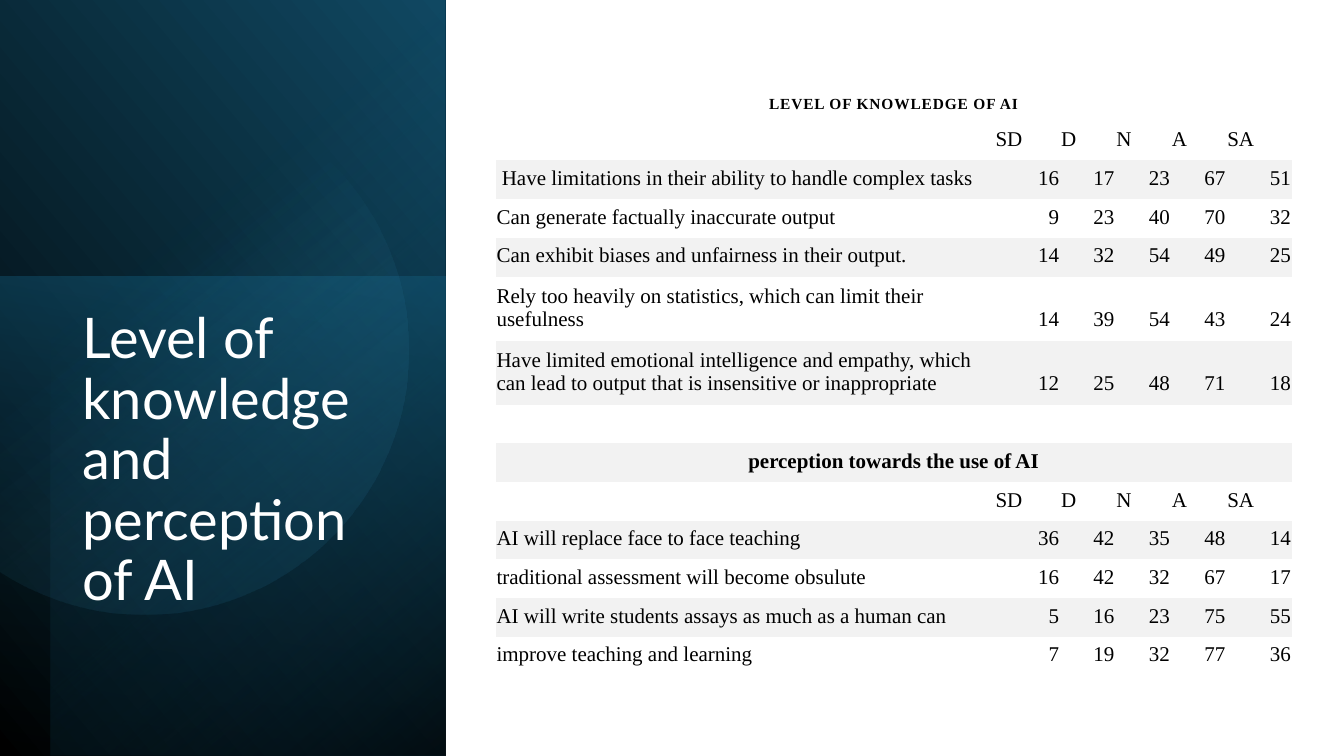
"""Build the slide on the level of knowledge and perception of AI."""
from dataclasses import dataclass
from math import acos, cos, pi, sin

from pptx import Presentation
from pptx.dml.color import RGBColor
from pptx.enum.shapes import MSO_SHAPE
from pptx.enum.text import MSO_ANCHOR, PP_ALIGN
from pptx.oxml import parse_xml
from pptx.oxml.ns import nsdecls, qn
from pptx.util import Inches, Pt

RECTANGLE = MSO_SHAPE.RECTANGLE
TOP, BOTTOM = MSO_ANCHOR.TOP, MSO_ANCHOR.BOTTOM
LEFT, CENTER, RIGHT = PP_ALIGN.LEFT, PP_ALIGN.CENTER, PP_ALIGN.RIGHT
NO_GRID_STYLE = "{2D5ABB26-0587-4C30-8999-92F81FD0307C}"
COLUMNS, ROWS = 160, 90
SLIDE_WIDTH, SLIDE_HEIGHT = Inches(13.33), Inches(7.5)
PANEL_RIGHT = 53


@dataclass(frozen=True)
class Theme:
    title_font: str = "Lato"
    table_font: str = "Times New Roman"
    title_size: float = 40
    caption_size: float = 11
    table_size: float = 15
    title: str = "FFFFFF"
    ink: str = "000000"
    band: str = "F2F2F2"
    black: str = "000000"
    navy: str = "104862"
    teal: str = "156082"
    deep: str = "0B3041"
    sky: str = "46B1E1"


THEME = Theme()


@dataclass(frozen=True)
class Stop:
    position: int
    color: str
    opacity: int = 100


@dataclass(frozen=True)
class Wash:
    left: float
    top: float
    rotation: int
    flipped: bool
    angle: int
    stops: tuple[Stop, ...]


@dataclass(frozen=True)
class Row:
    label: str = ""
    marks: tuple[str, ...] = ()
    height: float = 4.61
    heading: bool = False
    size: float = THEME.table_size
    tracking: float = 0


WASHES = (
    Wash(0, 0, 90, True, 310, (Stop(0, THEME.black), Stop(100, THEME.navy))),
    Wash(0, 32.88, 270, False, 190, (Stop(0, THEME.teal, 50), Stop(100, THEME.deep, 0))),
    Wash(6, 0, 270, True, 220, (Stop(0, THEME.black, 59), Stop(69, THEME.teal, 0))),
)
GLOW = (Stop(39, THEME.sky, 0), Stop(100, THEME.navy, 26))
SCALE = Row(marks=("SD", "D", "N", "A", "SA"))
TALL = 7.62
SURVEY = (
    Row("LEVEL OF KNOWLEDGE OF AI", height=4.9, heading=True,
        size=THEME.caption_size, tracking=0.6),
    SCALE,
    Row(" Have limitations in their ability to handle complex tasks",
        ("16", "17", "23", "67", "51")),
    Row("Can generate factually inaccurate output", ("9", "23", "40", "70", "32")),
    Row("Can exhibit biases and unfairness in their output.",
        ("14", "32", "54", "49", "25")),
    Row("Rely too heavily on statistics, which can limit their usefulness",
        ("14", "39", "54", "43", "24"), TALL),
    Row("Have limited emotional intelligence and empathy, which can lead to output "
        "that is insensitive or inappropriate", ("12", "25", "48", "71", "18"), TALL),
    Row(),
    Row("perception towards the use of AI", heading=True),
    SCALE,
    Row("AI will replace face to face teaching", ("36", "42", "35", "48", "14")),
    Row("traditional assessment will become obsulute", ("16", "42", "32", "67", "17")),
    Row("AI will write students assays as much as a human can",
        ("5", "16", "23", "75", "55")),
    Row("improve teaching and learning", ("7", "19", "32", "77", "36")),
)
SURVEY_COLUMNS = (59.4, 7.8, 6.6, 6.6, 6.6, 7.8)


def across(columns: float) -> int:
    """Turn grid columns into a length."""
    return round(SLIDE_WIDTH * columns / COLUMNS)


def down(rows: float) -> int:
    """Turn grid rows into a length."""
    return round(SLIDE_HEIGHT * rows / ROWS)


def put_text(frame, text: str, *, font: str, size: float, color: str, bold: bool = False,
             align=LEFT, line_spacing: float = 1.0, tracking: float = 0) -> None:
    """Write one formatted paragraph into a text frame."""
    paragraph = frame.paragraphs[0]
    paragraph.alignment = align
    paragraph.line_spacing = line_spacing
    if not text:
        paragraph._p.get_or_add_endParaRPr().set("sz", str(round(size * 100)))
        return
    run = paragraph.add_run()
    run.text = text
    run.font.name, run.font.size, run.font.bold = font, Pt(size), bold
    run.font.color.rgb = RGBColor.from_string(color)
    if tracking:
        run._r.get_or_add_rPr().set("spc", str(round(tracking * 100)))


def paint_gradient(shape, stops: tuple[Stop, ...], angle: float) -> None:
    """Fill a shape with a linear gradient and drop its line and shadow."""
    shape.shadow.inherit = False
    shape.line.fill.background()
    shape.fill.background()
    marks = "".join(
        f'<a:gs pos="{stop.position * 1000}"><a:srgbClr val="{stop.color}">'
        f'<a:alpha val="{stop.opacity * 1000}"/></a:srgbClr></a:gs>' for stop in stops)
    gradient = parse_xml(
        f'<a:gradFill {nsdecls("a")} rotWithShape="1"><a:gsLst>{marks}</a:gsLst>'
        f'<a:lin ang="{round(angle * 60000)}" scaled="0"/></a:gradFill>')
    properties = shape._element.spPr
    properties.replace(properties.find(qn("a:noFill")), gradient)


def add_wash(slide, wash: Wash) -> None:
    """Lay a quarter-turned gradient from its corner to the panel's far corner."""
    left, top = across(wash.left), down(wash.top)
    width, height = across(PANEL_RIGHT) - left, SLIDE_HEIGHT - top
    shift = (width - height) // 2
    panel = slide.shapes.add_shape(RECTANGLE, left + shift, top - shift, height, width)
    panel.rotation = wash.rotation
    if wash.flipped:
        panel._element.spPr.find(qn("a:xfrm")).set("flipH", "1")
    paint_gradient(panel, wash.stops, wash.angle)


def add_glow(slide, center_x: float, center_y: float, radius: float) -> None:
    """Draw the circle that the slide's left edge cuts off."""
    reach, steps = acos(-center_x / radius), 90
    angles = [reach * (2 * step / steps - 1) for step in range(steps + 1)]
    rim = [(across(center_x + radius * cos(angle)), down(center_y + radius * sin(angle)))
           for angle in angles]
    builder = slide.shapes.build_freeform(*rim[0])
    builder.add_line_segments(rim[1:], close=True)
    paint_gradient(builder.convert_to_shape(), GLOW, 51.6)


def add_title(slide, text: str) -> None:
    """Place the title on the dark panel."""
    frame = slide.shapes.add_textbox(across(8.64), down(36.36), across(37.8),
                                     down(40.32)).text_frame
    frame.word_wrap, frame.vertical_anchor = True, TOP
    put_text(frame, text, font=THEME.title_font, size=THEME.title_size,
             color=THEME.title, line_spacing=0.9)


def add_survey(slide, rows: tuple[Row, ...]) -> None:
    """Tabulate the answers, with every second row banded."""
    table = slide.shapes.add_table(
        len(rows), len(SURVEY_COLUMNS), across(59), down(9.6), across(sum(SURVEY_COLUMNS)),
        down(sum(row.height for row in rows))).table
    table.first_row = table.horz_banding = False
    table._tbl.tblPr.find(qn("a:tableStyleId")).text = NO_GRID_STYLE
    for column, width in zip(table.columns, SURVEY_COLUMNS):
        column.width = across(width)
    for index, row in enumerate(rows):
        table.rows[index].height = down(row.height)
        texts = (row.label, *row.marks) + ("",) * (len(SURVEY_COLUMNS) - 1 - len(row.marks))
        for position, text in enumerate(texts):
            cell = table.cell(index, position)
            cell.vertical_anchor = BOTTOM
            cell.margin_left = cell.margin_top = cell.margin_right = Inches(0.01)
            cell.margin_bottom = Inches(0.09)
            if index and index % 2 == 0:
                cell.fill.solid()
                cell.fill.fore_color.rgb = RGBColor.from_string(THEME.band)
            else:
                cell.fill.background()
            align = CENTER if row.heading else RIGHT if text.isdigit() else LEFT
            put_text(cell.text_frame, text, font=THEME.table_font, size=row.size,
                     color=THEME.ink, bold=row.heading, align=align, tracking=row.tracking)
        if row.heading:
            table.cell(index, 0).merge(table.cell(index, len(SURVEY_COLUMNS) - 1))


def main() -> None:
    """Build and save the slide."""
    deck = Presentation()
    deck.slide_width, deck.slide_height = SLIDE_WIDTH, SLIDE_HEIGHT
    slide = deck.slides.add_slide(deck.slide_layouts[6])
    for wash in WASHES:
        add_wash(slide, wash)
    add_glow(slide, 17.16, 41.64, 31.5)
    add_title(slide, "Level of knowledge and perception of AI")
    add_survey(slide, SURVEY)
    deck.save("out.pptx")


if __name__ == "__main__":
    main()
